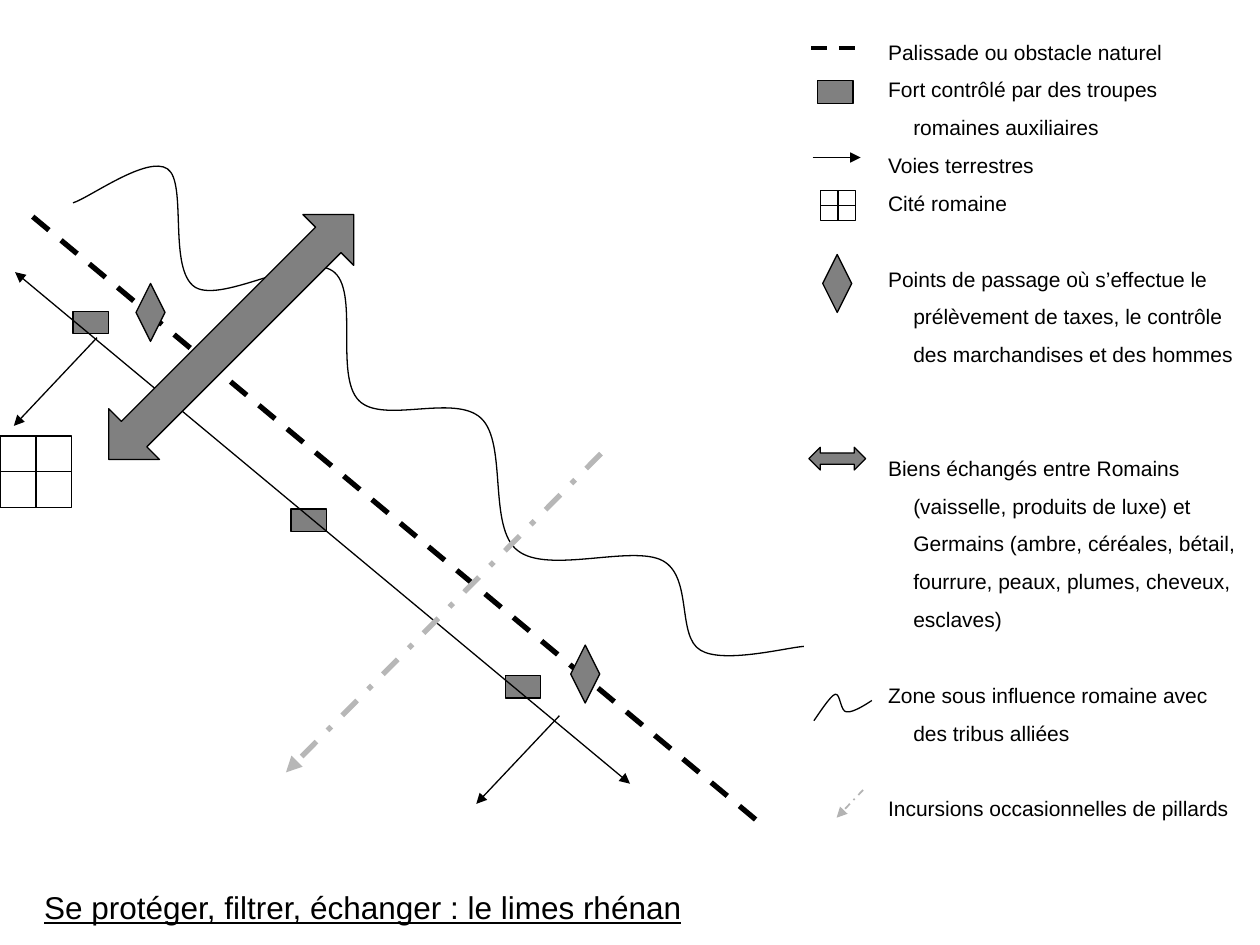
from pptx import Presentation
from pptx.dml.color import RGBColor
from pptx.enum.dml import MSO_LINE_DASH_STYLE as DASH
from pptx.enum.shapes import MSO_CONNECTOR, MSO_SHAPE
from pptx.enum.text import MSO_ANCHOR, PP_ALIGN
from pptx.oxml.ns import qn
from pptx.util import Inches, Pt
from lxml import etree

COLORS = {"black": "000000", "fill": "808080", "raid": "B7B7B7", "raid_key": "B3B3B3"}
RGB = {name: RGBColor.from_string(value) for name, value in COLORS.items()}

prs = Presentation()
prs.slide_width, prs.slide_height = Inches(10), Inches(7.5)
s = prs.slides.add_slide(prs.slide_layouts[5])


def add_line(start, end, color="black", width=0.75, dash=None, arrows=()):
    """Draw a straight connector; arrows names the ends (headEnd, tailEnd) to point."""
    c = s.shapes.add_connector(MSO_CONNECTOR.STRAIGHT, *map(Inches, start + end))
    c.line.color.rgb = RGB[color]
    c.line.width = Pt(width)
    if dash:
        c.line.dash_style = dash
    ln = c.line._get_or_add_ln()
    for end_tag in arrows:
        etree.SubElement(ln, qn("a:" + end_tag), type="triangle")
    etree.SubElement(c._element.spPr, qn("a:effectLst"))
    return c


def add_symbol(kind, left, top, width, height, filled=True):
    sp = s.shapes.add_shape(kind, *map(Inches, (left, top, width, height)))
    sp.shadow.inherit = False
    if filled:
        sp.fill.solid()
        sp.fill.fore_color.rgb = RGB["fill"]
    else:
        sp.fill.background()
    sp.line.color.rgb = RGB["black"]
    sp.line.width = Pt(0.75)
    return sp


# Curves: start point, then two control points and an end point per segment
influence_zone = [
    (0.58, 1.61), (0.71, 1.57), (1.17, 1.23), (1.33, 1.34),
    (1.49, 1.45), (1.33, 2.14), (1.55, 2.28), (1.77, 2.41), (2.42, 2), (2.64, 2.15),
    (2.86, 2.3), (2.65, 2.98), (2.85, 3.18), (3.04, 3.37), (3.61, 3.12), (3.82, 3.32),
    (4.03, 3.52), (3.87, 4.19), (4.11, 4.37), (4.35, 4.56), (5.02, 4.32), (5.26, 4.45),
    (5.5, 4.58), (5.37, 5.05), (5.56, 5.16), (5.74, 5.27), (6.24, 5.14), (6.38, 5.13)]
influence_key = [
    (6.46, 5.72), (6.49, 5.68), (6.59, 5.52), (6.63, 5.51), (6.67, 5.5), (6.67, 5.65),
    (6.72, 5.65), (6.77, 5.66), (6.89, 5.58), (6.92, 5.56)]
for curve in (influence_zone, influence_key):
    builder = s.shapes.build_freeform(*map(Inches, curve[0]))
    builder.add_line_segments([tuple(map(Inches, pt)) for pt in curve[3::3]], close=False)
    sp = builder.convert_to_shape()
    # Bend each straight segment by adding its two control points
    for i, segment in enumerate(list(sp._element.iter(qn("a:lnTo")))):
        bend = etree.Element(qn("a:cubicBezTo"))
        for x, y in curve[3 * i + 1:3 * i + 3]:
            etree.SubElement(bend, qn("a:pt"), x=str(Inches(x) - sp.left), y=str(Inches(y) - sp.top))
        bend.append(segment[0])
        segment.getparent().replace(segment, bend)
    sp.shadow.inherit = False
    sp.fill.background()
    sp.line.color.rgb = RGB["black"]
    sp.line.width = Pt(0.75)

# Palisade, forts and roads
add_line((0.26, 1.72), (6.04, 6.54), width=3, dash=DASH.DASH)
add_line((6.44, 0.38), (6.83, 0.38), width=2.25, dash=DASH.DASH)
for left, top in ((0.58, 2.47), (2.31, 4.04), (4.01, 5.36), (6.49, 0.64)):
    add_symbol(MSO_SHAPE.RECTANGLE, left, top, 0.28, 0.18)
add_line((5, 6.22), (0.12, 2.16), arrows=("headEnd", "tailEnd"))
for start, end in (((0.77, 2.68), (0.11, 3.38)), ((4.44, 5.68), (3.78, 6.38)),
                   ((6.45, 1.25), (6.83, 1.25))):
    add_line(start, end, arrows=("tailEnd",))

# Crossing points
for left, top in ((1.08, 2.25), (4.53, 5.12), (6.53, 2.02)):
    add_symbol(MSO_SHAPE.DIAMOND, left, top, 0.23, 0.46)

# Roman towns: a square split in four
for box in ((0, 3.46, 0.57, 0.57), (6.51, 1.51, 0.28, 0.24)):
    town = add_symbol(MSO_SHAPE.RECTANGLE, *box, filled=False)
    for first, last in ((0, 2), (1, 3)):
        divider = add_line(box[:2], box[:2])
        divider.begin_connect(town, first)
        divider.end_connect(town, last)

# Trade and raids
for box, angle in (((0.46, 2.39, 2.75, 0.57), 315), ((6.42, 3.55, 0.45, 0.18), 0)):
    trade = add_symbol(MSO_SHAPE.LEFT_RIGHT_ARROW, *box)
    trade.rotation = angle
add_line((4.77, 3.6), (2.27, 6.13), "raid", 3, DASH.DASH_DOT, ("tailEnd",))
add_line((6.85, 6.27), (6.64, 6.49), "raid_key", 1, DASH.DASH_DOT, ("tailEnd",))

# Legend: text and number of lines left free above it
legend = [
    ("Palissade ou obstacle naturel", 0),
    ("Fort contrôlé par des troupes romaines auxiliaires", 0),
    ("Voies terrestres", 0),
    ("Cité romaine", 0),
    ("Points de passage où s’effectue le prélèvement de taxes, le contrôle "
     "des marchandises et des hommes", 1),
    ("Biens échangés entre Romains (vaisselle, produits de luxe) et Germains "
     "(ambre, céréales, bétail, fourrure, peaux, plumes, cheveux, esclaves)", 2),
    ("Zone sous influence romaine avec des tribus alliées", 1),
    ("Incursions occasionnelles de pillards", 1),
]
LINE_HEIGHT = 21.7
tf = s.shapes.add_textbox(*map(Inches, (6.95, 0.11, 3.01, 5.69))).text_frame
tf.word_wrap = True
tf.margin_left = tf.margin_right = tf.margin_top = tf.margin_bottom = Inches(0.1)
for i, (text, free_lines) in enumerate(legend):
    p = tf.paragraphs[0] if i == 0 else tf.add_paragraph()
    p.text = text
    p.line_spacing = 1.5
    p.space_before = Pt(free_lines * LINE_HEIGHT)
    p.font.name, p.font.size = "Arial", Pt(12)
    p.font.color.rgb = RGB["black"]
    pPr = p._p.get_or_add_pPr()
    pPr.set("marL", str(Inches(0.2)))
    pPr.set("indent", str(-Inches(0.2)))

# Title
title = s.shapes.title
title.left, title.top, title.width, title.height = map(Inches, (0.25, 7, 5.93, 0.4))
tf = title.text_frame
tf.text = "Se protéger, filtrer, échanger : le limes rhénan"
tf.vertical_anchor = MSO_ANCHOR.TOP
p = tf.paragraphs[0]
p.alignment = PP_ALIGN.LEFT
p.font.name, p.font.size, p.font.underline = "Arial", Pt(18), True
p.font.color.rgb = RGB["black"]

prs.save("out.pptx")
